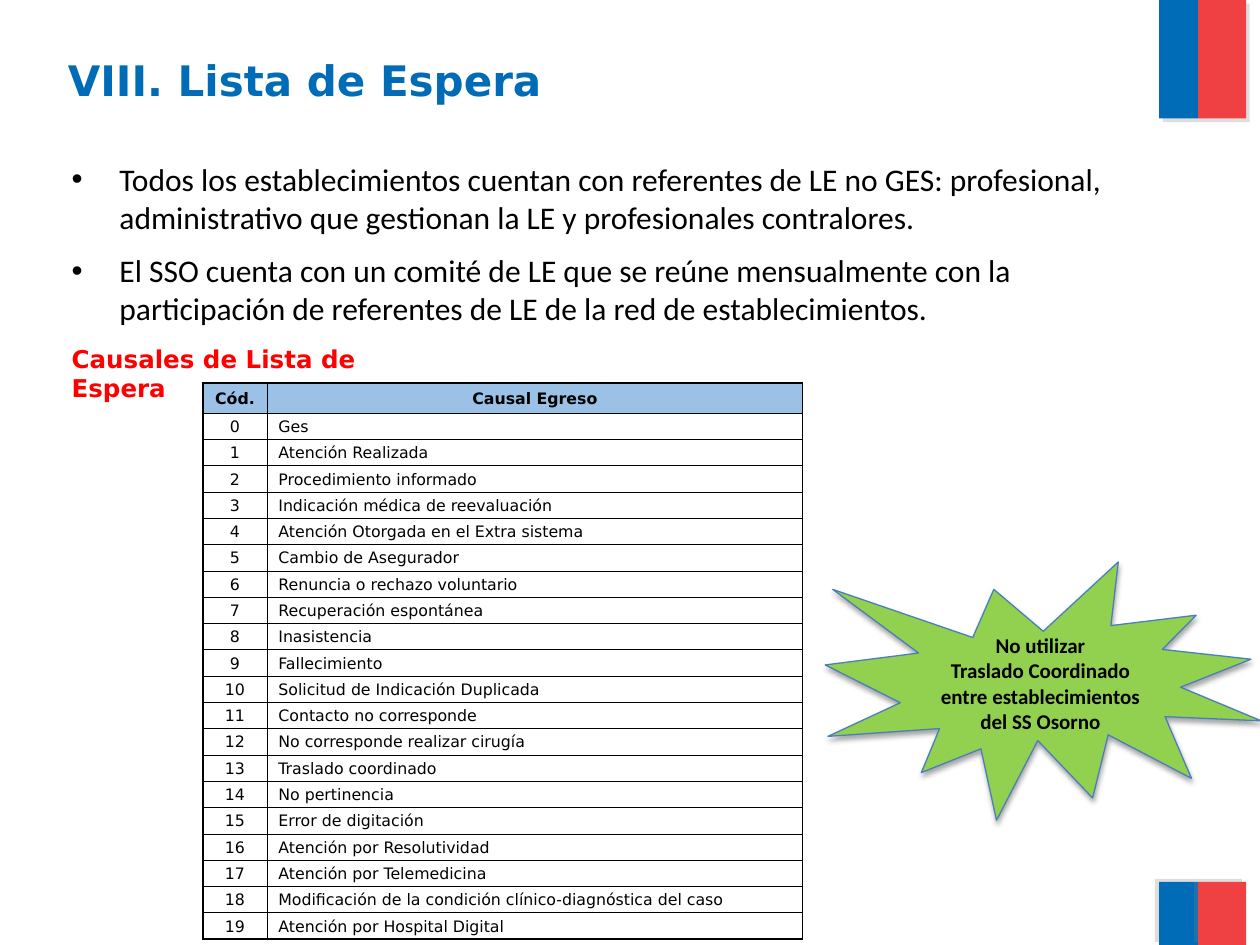
from dataclasses import dataclass

from lxml.etree import SubElement as Sub
from pptx import Presentation
from pptx.dml.color import RGBColor
from pptx.enum.shapes import MSO_SHAPE as Shape
from pptx.enum.text import MSO_ANCHOR as Anchor, PP_ALIGN as Align
from pptx.oxml.ns import qn
from pptx.util import Emu, Pt

SCALE = 9144  # EMU per px, 100 px to the inch
SANS, BODY = "DejaVu Sans", "Calibri"
BLUE, RED, BLACK = "006CB7", "EF4144", "000000"


@dataclass
class Box:
    x: int
    y: int
    w: int
    h: int

    def emu(self) -> list[Emu]:
        return [px(n) for n in (self.x, self.y, self.w, self.h)]


@dataclass
class Shade:
    hue: str
    alpha: int
    blur: float
    dist: float
    angle: int


@dataclass
class Block:
    box: Box
    fill: str
    shade: Shade
    kind: Shape = Shape.RECTANGLE


@dataclass
class Style:
    font: str
    size: int
    hue: str = BLACK
    bold: bool = False


@dataclass
class Note:
    box: Box
    lines: list[str]
    style: Style
    anchor: Anchor = Anchor.TOP


def px(n: int) -> Emu:
    return Emu(n * SCALE)


def ink(code: str) -> RGBColor:
    return RGBColor.from_string(code)


def put(obj, form: dict) -> None:
    for key, val in form.items():
        setattr(obj, key, val)


def write(frame, lines: list[str], style: Style, **form) -> None:
    frame.text = "\n".join(lines)
    for para in frame.paragraphs:
        put(para, form)
        for run in para.runs:
            put(run.font, {"name": style.font, "size": Pt(style.size),
                           "bold": style.bold})
            run.font.color.rgb = ink(style.hue)


def cast(shape, shade: Shade) -> None:
    shape.shadow.inherit = False
    fx = shape._element.spPr.find(qn("a:effectLst"))
    drop = Sub(fx, qn("a:outerShdw"), blurRad=str(Pt(shade.blur)),
               dist=str(Pt(shade.dist)), dir=str(shade.angle * 60000),
               algn="ctr", rotWithShape="0")
    hue = Sub(drop, qn("a:srgbClr"), val=shade.hue)
    Sub(hue, qn("a:alpha"), val=str(shade.alpha * 1000))


def draw(slide, block: Block):
    shape = slide.shapes.add_shape(block.kind, *block.box.emu())
    shape.fill.solid()
    shape.fill.fore_color.rgb = ink(block.fill)
    shape.line.fill.background()
    cast(shape, block.shade)
    return shape


def label(slide, note: Note, **form):
    frame = slide.shapes.add_textbox(*note.box.emu()).text_frame
    put(frame, {"word_wrap": True, "vertical_anchor": note.anchor})
    write(frame, note.lines, note.style, **form)
    return frame


def edge(cell, side: str, width: float) -> None:
    line = Sub(cell._tc.get_or_add_tcPr(), qn(f"a:ln{side}"),
               w=str(Pt(width)))
    Sub(Sub(line, qn("a:solidFill")), qn("a:srgbClr"), val=BLACK)


def grid(slide, box: Box, cols: list[int], head: int,
         rows: list[tuple[str, str]]) -> None:
    last = len(rows) - 1
    table = slide.shapes.add_table(len(rows), 2, *box.emu()).table
    put(table, {"first_row": False, "horz_banding": False})
    for col, width in zip(table.columns, cols):
        col.width = px(width)
    for i, row in enumerate(rows):
        table.rows[i].height = px(head) if i == 0 else px(box.h - head) // last
        for j, text in enumerate(row):
            cell = table.cell(i, j)
            mid = i == 0 or j == 0
            put(cell, {"margin_left": px(1 if mid else 9),
                       "margin_right": px(1), "margin_top": px(1),
                       "margin_bottom": 0, "vertical_anchor": Anchor.MIDDLE})
            write(cell.text_frame, [text], Style(SANS, 9, bold=i == 0),
                  alignment=Align.CENTER if mid else Align.LEFT)
            # Heavy outline and header rule, thin inner lines
            heavy = {"L": j == 0, "R": j == 1, "T": i < 2,
                     "B": i in (0, last)}
            for side, thick in heavy.items():
                edge(cell, side, 1 if thick else 0.5)
            if i == 0:
                cell.fill.solid()
                cell.fill.fore_color.rgb = ink("9BC2E6")
            else:
                cell.fill.background()


CAUSES = [
    "Ges", "Atención Realizada", "Procedimiento informado",
    "Indicación médica de reevaluación",
    "Atención Otorgada en el Extra sistema", "Cambio de Asegurador",
    "Renuncia o rechazo voluntario", "Recuperación espontánea",
    "Inasistencia", "Fallecimiento", "Solicitud de Indicación Duplicada",
    "Contacto no corresponde", "No corresponde realizar cirugía",
    "Traslado coordinado", "No pertinencia", "Error de digitación",
    "Atención por Resolutividad", "Atención por Telemedicina",
    "Modificación de la condición clínico-diagnóstica del caso",
    "Atención por Hospital Digital",
]
POINTS = [
    "Todos los establecimientos cuentan con referentes de LE no GES: "
    "profesional, administrativo que gestionan la LE y profesionales "
    "contralores.",
    "El SSO cuenta con un comité de LE que se reúne mensualmente con la "
    "participación de referentes de LE de la red de establecimientos.",
]


def main() -> None:
    deck = Presentation()
    put(deck, {"slide_width": px(1000), "slide_height": px(750)})
    slide = deck.slides.add_slide(deck.slide_layouts[6])

    # Colour bands at the top and bottom right
    for top, high, angle in ((0, 94, 45), (700, 50, 215)):
        for left, wide, hue in ((920, 31, BLUE), (951, 38, RED)):
            draw(slide, Block(Box(left, top, wide, high), hue,
                              Shade("808080", 25, 0, 3, angle)))

    # Bulleted points
    frame = label(slide, Note(Box(47, 122, 894, 146), POINTS,
                              Style(BODY, 18)))
    for para in frame.paragraphs:
        props = para._p.get_or_add_pPr()
        put_off = px(38)
        props.set("marL", str(put_off))
        props.set("indent", str(-put_off))
        Sub(props, qn("a:buFont"), typeface="Arial")
        Sub(props, qn("a:buChar"), char="•")
    frame.paragraphs[1].space_before = Pt(9)

    # Table of causes
    rows = [("Cód.", "Causal Egreso")]
    rows += [(str(n), cause) for n, cause in enumerate(CAUSES)]
    grid(slide, Box(161, 304, 476, 442), [51, 425], 24, rows)

    # Starburst warning
    burst = draw(slide, Block(Box(655, 446, 346, 205), "92D050",
                              Shade(BLACK, 35, 3.1, 1.8, 90),
                              Shape.EXPLOSION1))
    burst.line.color.rgb = ink("4B7EBC")
    burst.line.width = Pt(0.75)
    put(burst.text_frame, {"word_wrap": True,
                           "vertical_anchor": Anchor.MIDDLE})
    write(burst.text_frame,
          ["No utilizar",
           "Traslado Coordinado entre establecimientos del SS Osorno"],
          Style(BODY, 12, bold=True), alignment=Align.CENTER)

    # Table heading and slide title
    label(slide, Note(Box(47, 268, 325, 34), ["Causales de Lista de Espera"],
                      Style(SANS, 14, "FF0000", True)))
    label(slide, Note(Box(44, 34, 893, 58), ["VIII. Lista de Espera"],
                      Style(SANS, 24, BLUE, True), Anchor.MIDDLE))

    deck.save("out.pptx")


if __name__ == "__main__":
    main()
